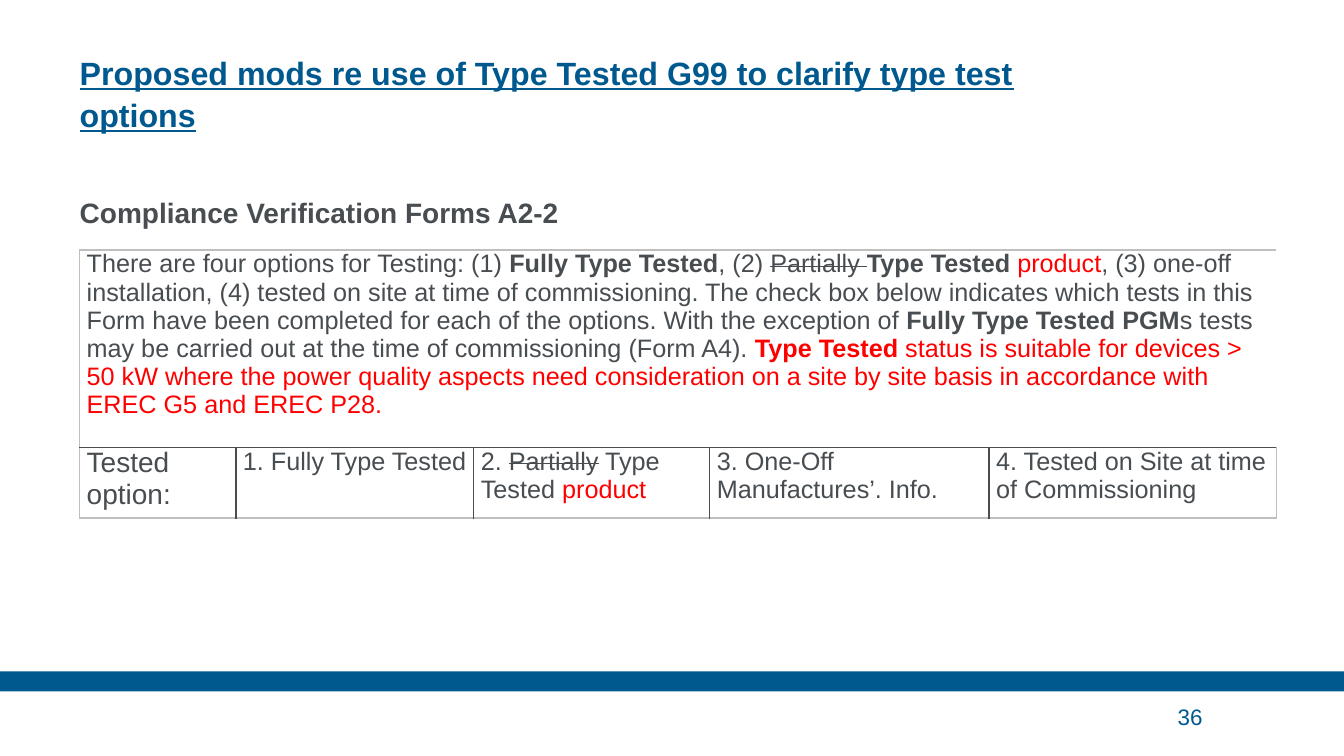
from lxml.etree import SubElement
from pptx import Presentation
from pptx.dml.color import RGBColor
from pptx.enum.shapes import MSO_SHAPE
from pptx.enum.text import MSO_ANCHOR
from pptx.oxml.ns import qn
from pptx.util import Inches, Pt

BLUE = RGBColor(0x00, 0x59, 0x8E)
GREY = RGBColor(0x48, 0x4D, 0x51)
LIGHT = RGBColor(0xBF, 0xBF, 0xBF)
RED = RGBColor(0xFF, 0x00, 0x00)


def add_span(para, text, size=18, color=GREY, bold=False, underline=False, strike=False):
    span = para.add_run()
    span.text = text
    font = span.font
    font.name, font.size, font.bold, font.underline = "Arial", Pt(size), bold, underline
    font.color.rgb = color
    if strike:
        font._element.set("strike", "sngStrike")


def add_box(page, left, top, width, height, anchor=MSO_ANCHOR.TOP):
    box = page.shapes.add_textbox(Inches(left), Inches(top), Inches(width), Inches(height))
    frame = box.text_frame
    frame.word_wrap = True
    frame.vertical_anchor = anchor
    frame.margin_left = frame.margin_right = frame.margin_top = frame.margin_bottom = 0
    return frame.paragraphs[0]


deck = Presentation()
deck.slide_width, deck.slide_height = Inches(13.33), Inches(7.5)
page = deck.slides.add_slide(deck.slide_layouts[6])

# Footer band and page number
band = page.shapes.add_shape(MSO_SHAPE.RECTANGLE, 0, Inches(6.66), deck.slide_width, Inches(0.2))
band.shadow.inherit = False
band.fill.solid()
band.fill.fore_color.rgb = BLUE
band.line.fill.background()
number = add_box(page, 11.68, 6.91, 1.23, 0.39, MSO_ANCHOR.MIDDLE)
add_span(number, "36", size=16, color=BLUE)

# Title and subtitle
title = add_box(page, 0.79, 0.31, 9.84, 1.02, MSO_ANCHOR.BOTTOM)
title.line_spacing = Pt(30)
add_span(title, "Proposed mods re use of Type Tested G99 to clarify type test options",
         size=23, color=BLUE, bold=True, underline=True)
subtitle = add_box(page, 0.79, 1.97, 12.12, 0.4)
subtitle.line_spacing = Pt(22)
add_span(subtitle, "Compliance Verification Forms A2-2", size=20, bold=True)

# Table wording: each cell is a list of spans
bold, struck, red = {"bold": True}, {"strike": True}, {"color": RED}
explanation = [
    ("There are four options for Testing: (1) ", {}),
    ("Fully Type Tested", bold),
    (", (2) ", {}),
    ("Partially ", struck),
    ("Type Tested ", bold),
    ("product", red),
    (", (3) one-off installation, (4) tested on site at time of commissioning. "
     "The check box below indicates which tests in this Form have been completed "
     "for each of the options. With the exception of ", {}),
    ("Fully Type Tested PGM", bold),
    ("s tests may be carried out at the time of commissioning (Form A4). ", {}),
    ("Type Tested", bold | red),
    (" status is suitable for devices > 50 kW where the power quality aspects need "
     "consideration on a site by site basis in accordance with EREC G5 and EREC P28.", red),
]
options = [
    [("Tested option:", {"size": 20})],
    [("1. Fully Type Tested", {})],
    [("2. ", {}), ("Partially", struck), (" Type Tested ", {}), ("product", red)],
    [("3. One-Off Manufactures’. Info.", {})],
    [("4. Tested on Site at time of Commissioning", {})],
]
rows = [[explanation, [], [], [], []], options]
widths = [1.55, 2.36, 2.34, 2.77, 2.85]
heights = [1.96, 0.7]

# Options table
table = page.shapes.add_table(2, 5, Inches(0.79), Inches(2.48),
                              Inches(sum(widths)), Inches(sum(heights))).table
table.first_row = table.horz_banding = False
for column, width in zip(table.columns, widths):
    column.width = Inches(width)
for row, height in zip(table.rows, heights):
    row.height = Inches(height)
table.cell(0, 0).merge(table.cell(0, 4))

for r, row in enumerate(rows):
    for c, spans in enumerate(row):
        cell = table.cell(r, c)
        cell.margin_left = cell.margin_right = Inches(0.07)
        cell.margin_top = cell.margin_bottom = 0
        for text, style in spans:
            add_span(cell.text_frame.paragraphs[0], text, **style)
        # Light outer frame, dark inner rules
        outer = {"lnL": c == 0, "lnR": c == 4, "lnT": r == 0, "lnB": r == 1}
        for side, is_outer in outer.items():
            if r == 0 and side in ("lnL", "lnR") and not is_outer:
                continue
            line = SubElement(cell._tc.get_or_add_tcPr(), qn(f"a:{side}"), w=str(Pt(1)))
            fill = SubElement(line, qn("a:solidFill"))
            SubElement(fill, qn("a:srgbClr"), val=str(LIGHT if is_outer else GREY))
        cell.fill.background()

deck.save("out.pptx")
